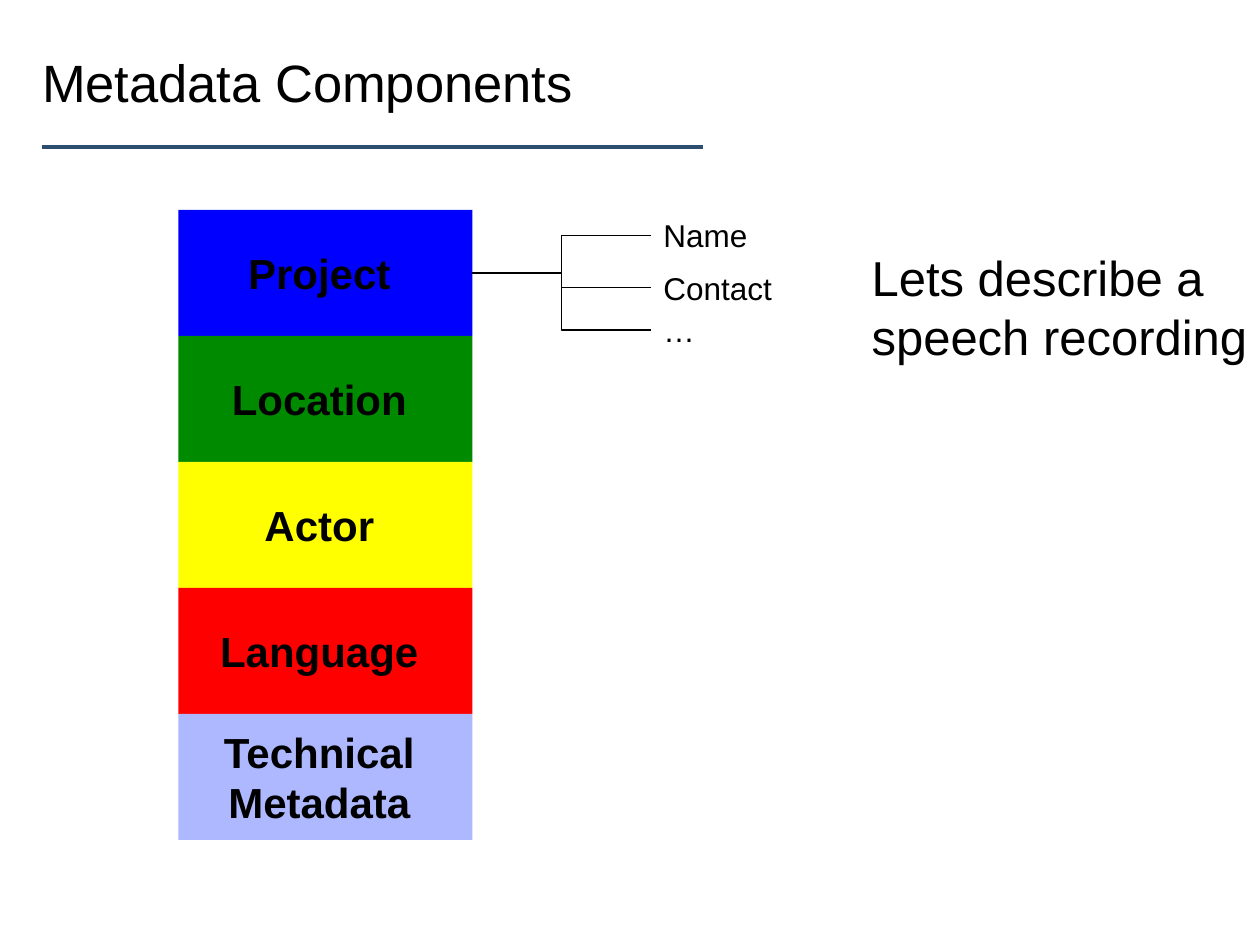
from lxml import etree
from pptx import Presentation
from pptx.dml.color import RGBColor
from pptx.enum.shapes import MSO_CONNECTOR, MSO_SHAPE
from pptx.enum.text import MSO_ANCHOR, MSO_AUTO_SIZE, PP_ALIGN
from pptx.oxml.ns import qn
from pptx.util import Pt

RECTANGLE = MSO_SHAPE.RECTANGLE
STRAIGHT, ELBOW = MSO_CONNECTOR.STRAIGHT, MSO_CONNECTOR.ELBOW
MIDDLE, CENTER = MSO_ANCHOR.MIDDLE, PP_ALIGN.CENTER
GROW = MSO_AUTO_SIZE.SHAPE_TO_FIT_TEXT
LEFT_SIDE, RIGHT_SIDE = 1, 3

TITLE = "Metadata Components"
COMPONENTS = [
    (["Project"], "0000FF"),
    (["Location"], "008A00"),
    (["Actor"], "FFFF00"),
    (["Language"], "FF0000"),
    (["Technical", "Metadata"], "ADB8FF"),
]
FIELDS = [("Name", 120, 63.5), ("Contact", 150, 77), ("…", 174, 32.4)]  # text, top, width
REMARK = ["Lets describe a", "speech recording"]

MARGIN = 24
STACK_LEFT, STACK_TOP, BLOCK_WIDTH, BLOCK_HEIGHT = 102, 120, 168, 72
FIELD_LEFT, FIELD_HEIGHT = 372, 29
FLUSH_FRAME = {"margin_left": 0, "vertical_anchor": MIDDLE, "word_wrap": True}
LABEL_FRAME = {"word_wrap": False, "auto_size": GROW}


def color(value):
    return RGBColor.from_string(value)


def write(box, lines, size, frame_format, bold=False, align=None):
    frame = box.text_frame
    for name, value in frame_format.items():
        setattr(frame, name, value)
    for index, line in enumerate(lines):
        para = frame.add_paragraph() if index else frame.paragraphs[0]
        para.alignment = align
        span = para.add_run()
        span.text = line
        for name, value in {"name": "Arial", "size": Pt(size), "bold": bold}.items():
            setattr(span.font, name, value)
        span.font.color.rgb = color("000000")


def add_text(page, bounds, lines, size, frame_format):
    box = page.shapes.add_textbox(*map(Pt, bounds))
    write(box, lines, size, frame_format)
    return box


def add_line(page, kind, ends, line_color, width):
    line = page.shapes.add_connector(kind, *map(Pt, ends))
    line.line.color.rgb = color(line_color)
    line.line.width = Pt(width)
    etree.SubElement(line._element.spPr, qn("a:effectLst"))
    return line


def add_block(page, top, lines, fill):
    block = page.shapes.add_shape(
        RECTANGLE, Pt(STACK_LEFT), Pt(top), Pt(BLOCK_WIDTH), Pt(BLOCK_HEIGHT))
    block.shadow.inherit = False
    block.fill.solid()
    block.fill.fore_color.rgb = color(fill)
    block.line.fill.background()
    write(block, lines, 24, FLUSH_FRAME, bold=True, align=CENTER)
    return block


def main():
    deck = Presentation()
    deck.slide_width, deck.slide_height = Pt(720), Pt(540)
    page = deck.slides.add_slide(deck.slide_layouts[6])

    add_line(page, STRAIGHT, (MARGIN, 84, 402, 84), "2D4E6F", 2.25)
    add_text(page, (MARGIN, 15, 456, 63), [TITLE], 30, FLUSH_FRAME)

    blocks = [add_block(page, STACK_TOP + index * BLOCK_HEIGHT, lines, fill)
              for index, (lines, fill) in enumerate(COMPONENTS)]

    project = blocks[0]
    start = (STACK_LEFT + BLOCK_WIDTH, STACK_TOP + BLOCK_HEIGHT / 2)
    for text, top, width in FIELDS:
        label = add_text(
            page, (FIELD_LEFT, top, width, FIELD_HEIGHT), [text], 18, LABEL_FRAME)
        end = (FIELD_LEFT, top + FIELD_HEIGHT / 2)
        branch = add_line(page, ELBOW, start + end, "000000", 0.75)
        branch.begin_connect(project, RIGHT_SIDE)
        branch.end_connect(label, LEFT_SIDE)

    add_text(page, (491, 138, 231, 75), REMARK, 28, LABEL_FRAME)
    deck.save("out.pptx")


if __name__ == "__main__":
    main()
